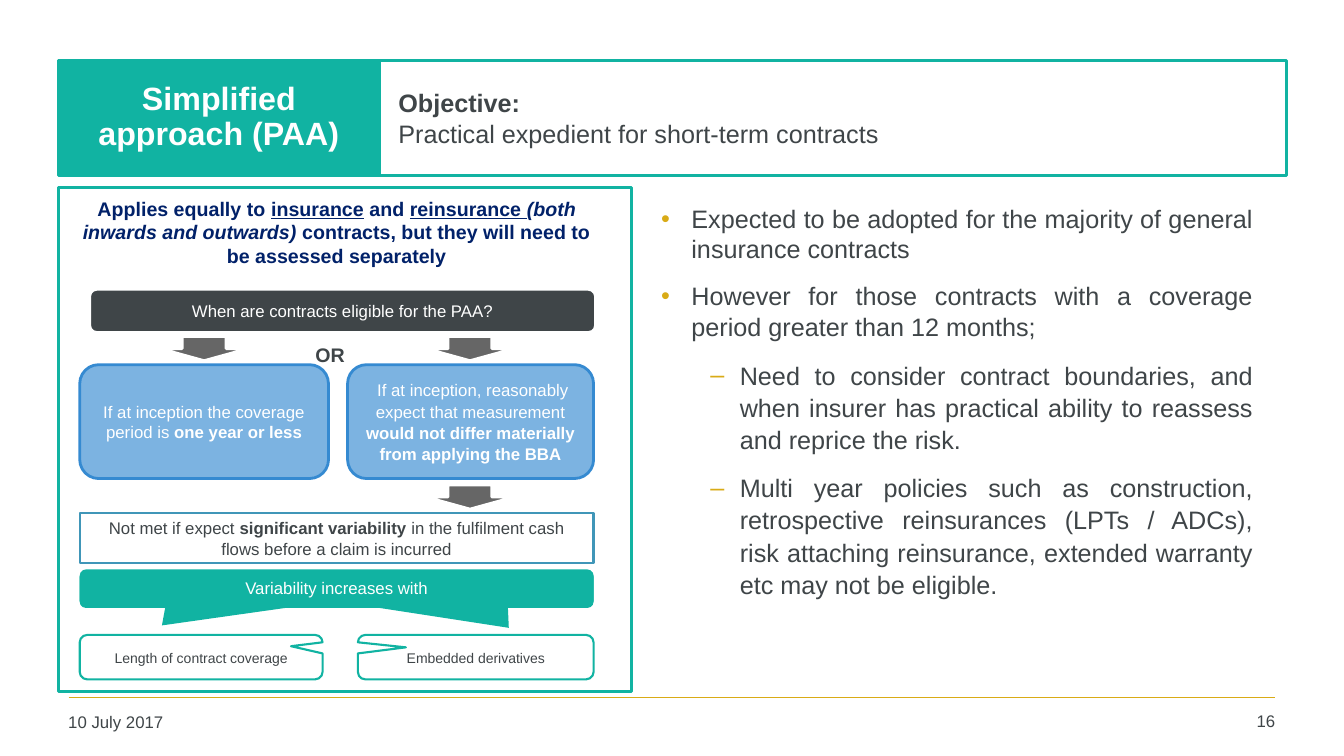
"""Build the slide on the simplified approach (PAA) for insurance contracts."""
from lxml.etree import SubElement
from pptx import Presentation
from pptx.dml.color import RGBColor
from pptx.enum.shapes import MSO_CONNECTOR, MSO_SHAPE
from pptx.enum.text import MSO_ANCHOR, MSO_AUTO_SIZE, PP_ALIGN
from pptx.oxml.ns import qn
from pptx.util import Cm, Pt

COLOURS = {
    "teal": "11B3A2", "slate": "3F4548", "white": "FFFFFF", "gold": "D9AB16",
    "navy": "012169", "sky": "7CB3E1", "blue": "358AD1", "steel": "4096B8",
    "grey": "666666",
}


def style_box(shape, fill=None, line=None, width=2.0, inset=None):
    """Set fill, outline, insets and anchor of a shape."""
    shape.shadow.inherit = False
    for part, colour in ((shape.fill, fill), (shape.line.fill, line)):
        if colour:
            part.solid()
            part.fore_color.rgb = RGBColor.from_string(COLOURS[colour])
        else:
            part.background()
    if line:
        shape.line.width = Pt(width)
    frame = shape.text_frame
    frame.word_wrap = True
    frame.vertical_anchor = MSO_ANCHOR.MIDDLE
    if inset is not None:
        frame.margin_left = frame.margin_right = Cm(inset)
        frame.margin_top = frame.margin_bottom = Cm(inset)
    return shape


def write(paragraph, runs, size, colour, align=PP_ALIGN.CENTER, spacing=None):
    """Add runs given as (text, flags) where flags use b, i and u."""
    paragraph.alignment = align
    if spacing:
        paragraph.line_spacing = spacing
    for text, flags in runs:
        run = paragraph.add_run()
        run.text = text
        run.font.name = "Arial"
        run.font.size = Pt(size)
        run.font.color.rgb = RGBColor.from_string(COLOURS[colour])
        run.font.bold = "b" in flags
        run.font.italic = "i" in flags
        run.font.underline = "u" in flags


deck = Presentation()
deck.slide_width, deck.slide_height = Cm(33.87), Cm(19.05)
slide = deck.slides.add_slide(deck.slide_layouts[1])
shapes = slide.shapes

footer_rule = shapes.add_connector(
    MSO_CONNECTOR.STRAIGHT, Cm(1.73), Cm(17.58), Cm(32.13), Cm(17.58))
footer_rule.line.color.rgb = RGBColor.from_string(COLOURS["gold"])
footer_rule.line.width = Pt(1)
SubElement(footer_rule._element.spPr, qn("a:effectLst"))

heading = shapes.title
heading.left, heading.top, heading.width, heading.height = Cm(1.47), Cm(1.52), Cm(8.1), Cm(2.9)
style_box(heading, "teal", "teal", inset=0.25)
heading.text_frame.auto_size = MSO_AUTO_SIZE.NONE
write(heading.text_frame.paragraphs[0], [("Simplified approach (PAA)", "b")], 23, "white", spacing=0.9)

points = slide.placeholders[1]
points.left, points.top, points.width, points.height = Cm(16.41), Cm(5), Cm(15.42), Cm(11.02)
points.text_frame.auto_size = MSO_AUTO_SIZE.NONE
bullet_levels = [("•", 0.76, -0.76, 1.0), ("–", 1.98, -0.74, 1.06)]
bullet_texts = [
    (0, "Expected to be adopted for the majority of general insurance contracts"),
    (0, "However for those contracts with a coverage period greater than 12 months;"),
    (1, "Need to consider contract boundaries, and when insurer has practical ability "
        "to reassess and reprice the risk."),
    (1, "Multi year policies such as construction, retrospective reinsurances (LPTs / ADCs), "
        "risk attaching reinsurance, extended warranty etc may not be eligible."),
]
for index, (level, text) in enumerate(bullet_texts):
    point = points.text_frame.add_paragraph() if index else points.text_frame.paragraphs[0]
    mark, margin, indent, spacing = bullet_levels[level]
    point.level = level
    properties = point._p.get_or_add_pPr()
    properties.set("marL", str(Cm(margin)))
    properties.set("indent", str(Cm(indent)))
    SubElement(SubElement(properties, qn("a:buClr")), qn("a:srgbClr")).set("val", COLOURS["gold"])
    SubElement(properties, qn("a:buFont")).set("typeface", "Arial")
    SubElement(properties, qn("a:buChar")).set("char", mark)
    point.space_before = Pt(9.4 if index else 0)
    point.space_after = Pt(2.6)
    write(point, [(text, "")], 18, "slate", PP_ALIGN.JUSTIFY, spacing)

CALLOUT = MSO_SHAPE.ROUNDED_RECTANGULAR_CALLOUT
flow_boxes = [
    (CALLOUT, (2.01, 14.38, 12.95, 0.94), (0.335, 1.033, 0.167),
     ("teal",), [], 12, "white", None),
    (MSO_SHAPE.FLOWCHART_ALTERNATE_PROCESS, (2.26, 7.29, 12.75, 1.09), (),
     ("slate", "white"), [("When are contracts eligible for the PAA?", "")], 12, "white", None),
    (MSO_SHAPE.ROUNDED_RECTANGLE, (8.76, 9.19, 6.2, 2.87), (),
     ("sky", "blue", 2, 0.1),
     [(" If at inception, reasonably expect that measurement ", ""),
      ("would not differ materially from applying the BBA", "b")], 12, "white", 1.06),
    (MSO_SHAPE.ROUNDED_RECTANGLE, (2.01, 9.19, 6.27, 2.87), (),
     ("sky", "blue", 2, 0.1),
     [("If at inception the coverage period is ", ""), ("one year or less", "b")], 12, "white", None),
    (CALLOUT, (9.02, 16, 5.94, 1.12), (-0.296, -0.22, 0.167),
     ("white", "teal", 1.5, 0.2), [("Embedded derivatives", "")], 10, "slate", 1.06),
    (CALLOUT, (2.01, 16, 6.12, 1.12), (0.37, -0.246, 0.167),
     ("white", "teal", 1.5, 0.2), [("Length of contract coverage", "")], 10, "slate", 1.06),
    (MSO_SHAPE.RECTANGLE, (2.01, 12.93, 12.95, 1.27), (),
     (None, "steel", 1.5),
     [("Not met if expect ", ""), ("significant variability", "b"),
      (" in the fulfilment cash flows before a claim is incurred", "")], 12, "slate", None),
    (CALLOUT, (2.01, 14.35, 12.95, 0.94), (-0.34, 1.001, 0.167),
     ("teal", None, 0, 0.2), [("Variability increases with", "")], 12, "white", None),
    (MSO_SHAPE.RECTANGLE, (1.47, 4.72, 14.45, 12.7), (),
     (None, "teal"), [], 12, "slate", None),
]
for kind, place, adjustments, look, runs, size, colour, spacing in flow_boxes:
    box = style_box(shapes.add_shape(kind, *map(Cm, place)), *look)
    for index, value in enumerate(adjustments):
        box.adjustments[index] = value
    if runs:
        write(box.text_frame.paragraphs[0], runs, size, colour, spacing=spacing)

for left, top in ((4.04, 8.48), (10.74, 8.48), (10.74, 12.22)):
    arrow = shapes.add_shape(MSO_SHAPE.DOWN_ARROW, Cm(left), Cm(top), Cm(2.21), Cm(0.61))
    style_box(arrow, "grey", "white")

labels = [
    ((2.01, 4.95, 12.95, 1.8), 0,
     [("Applies equally to ", "b"), ("insurance", "bu"), (" and ", "b"), ("reinsurance ", "bu"),
      ("(both inwards and outwards)", "bi"),
      (" contracts, but they will need to be assessed separately", "b")],
     14, "navy", PP_ALIGN.CENTER),
    ((7.7, 8.51, 1.88, 0.86), None, [("OR", "b")], 14, "slate", PP_ALIGN.LEFT),
    ((1.47, 17.81, 7.47, 0.91), None, [("10 July 2017", "")], 12, "slate", PP_ALIGN.LEFT),
    ((30, 17.78, 2.39, 0.94), None, [("16", "")], 12, "slate", PP_ALIGN.RIGHT),
]
for place, inset, runs, size, colour, align in labels:
    label = style_box(shapes.add_textbox(*map(Cm, place)), inset=inset)
    label.text_frame.vertical_anchor = MSO_ANCHOR.TOP
    write(label.text_frame.paragraphs[0], runs, size, colour, align)

objective = style_box(
    shapes.add_shape(MSO_SHAPE.RECTANGLE, Cm(9.53), Cm(1.52), Cm(22.89), Cm(2.9)), line="teal")
objective.text_frame.margin_left = Cm(0.51)
write(objective.text_frame.paragraphs[0], [("Objective:", "b")], 18, "slate", PP_ALIGN.LEFT)
write(objective.text_frame.add_paragraph(),
      [("Practical expedient for short-term contracts", "")], 18, "slate", PP_ALIGN.LEFT)

deck.save("out.pptx")
